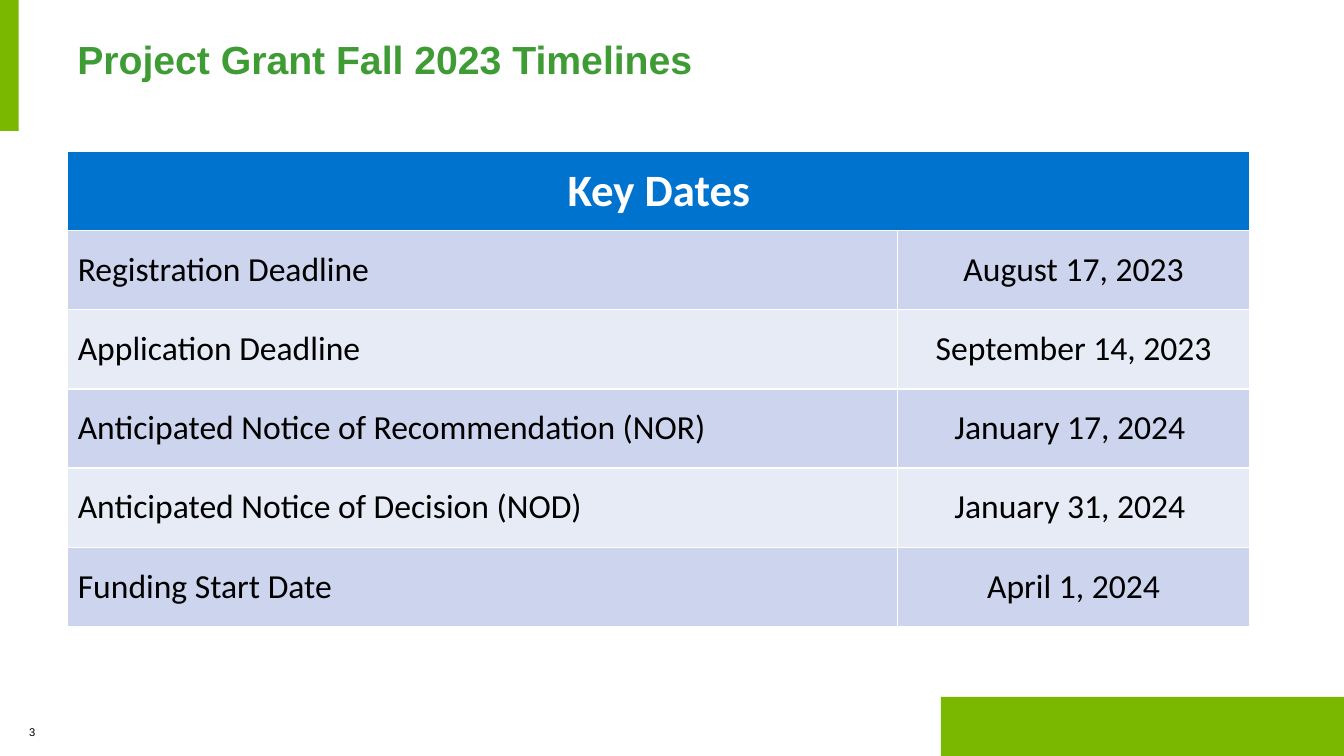
"""Build the Project Grant Fall 2023 timelines slide."""
from dataclasses import dataclass
from typing import Any

from pptx import Presentation
from pptx.dml.color import RGBColor
from pptx.enum.shapes import MSO_SHAPE
from pptx.enum.text import MSO_ANCHOR, MSO_AUTO_SIZE, PP_ALIGN
from pptx.util import Pt

RECTANGLE = MSO_SHAPE.RECTANGLE
MIDDLE = MSO_ANCHOR.MIDDLE
GROW = MSO_AUTO_SIZE.SHAPE_TO_FIT_TEXT
LEFT, CENTER = PP_ALIGN.LEFT, PP_ALIGN.CENTER

BLACK = RGBColor(0x00, 0x00, 0x00)
WHITE = RGBColor(0xFF, 0xFF, 0xFF)
BAR_GREEN = RGBColor(0x7A, 0xB8, 0x00)
TITLE_GREEN = RGBColor(0x3F, 0x9C, 0x35)
HEADER_BLUE = RGBColor(0x00, 0x73, 0xCF)
BANDS = (RGBColor(0xCC, 0xD5, 0xED), RGBColor(0xE7, 0xEB, 0xF6))

TITLE_FONT = {"name": "Arial", "size": Pt(28), "bold": True}
NUMBER_FONT = {"name": "Arial", "size": Pt(8), "bold": False}
HEADER_FONT = {"name": "Calibri", "size": Pt(32), "bold": True}
BODY_FONT = {"name": "Calibri", "size": Pt(24), "bold": False}

COLUMN_WIDTHS = (Pt(592.5), Pt(252))
ROW_HEIGHT = Pt(56.5)


@dataclass(frozen=True)
class Bar:
    left: float
    top: float
    width: float
    height: float


@dataclass(frozen=True)
class KeyDate:
    milestone: str
    date: str


BARS = (Bar(678.25, 0, 0, 0), ) and (
    Bar(672, 497.7, 288, 42.3),
    Bar(0, 0, 13.3, 93.6),
)

KEY_DATES = (
    KeyDate("Registration Deadline", "August 17, 2023"),
    KeyDate("Application Deadline", "September 14, 2023"),
    KeyDate("Anticipated Notice of Recommendation (NOR)", "January 17, 2024 "),
    KeyDate("Anticipated Notice of Decision (NOD)", "January 31, 2024 "),
    KeyDate("Funding Start Date", "April 1, 2024"),
)


def set_attributes(target: Any, values: dict[str, Any]) -> None:
    for name, value in values.items():
        setattr(target, name, value)


def write(frame: Any, text: str, font: dict[str, Any], color: RGBColor, alignment: Any) -> Any:
    para = frame.paragraphs[0]
    para.alignment = alignment
    span = para.add_run()
    span.text = text
    set_attributes(span.font, font)
    span.font.color.rgb = color
    return para


def add_bar(page: Any, bar: Bar) -> None:
    box = page.shapes.add_shape(
        RECTANGLE, Pt(bar.left), Pt(bar.top), Pt(bar.width), Pt(bar.height)
    )
    box.shadow.inherit = False
    box.fill.solid()
    box.fill.fore_color.rgb = BAR_GREEN
    box.line.fill.background()


def add_title(page: Any) -> None:
    title = page.shapes.title
    set_attributes(title, {"left": Pt(48), "top": Pt(21.6), "width": Pt(864), "height": Pt(41)})
    frame = title.text_frame
    set_attributes(frame, {"word_wrap": True, "auto_size": GROW, "vertical_anchor": MIDDLE})
    write(frame, "Project Grant Fall 2023 Timelines", TITLE_FONT, TITLE_GREEN, LEFT)


def add_page_number(page: Any) -> None:
    box = page.shapes.add_textbox(Pt(20.8), Pt(504), Pt(35.2), Pt(36))
    frame = box.text_frame
    set_attributes(frame, {
        "word_wrap": True, "vertical_anchor": MIDDLE, "margin_left": 0,
        "margin_top": Pt(3.6), "margin_right": 0, "margin_bottom": 0,
    })
    para = write(frame, "3", NUMBER_FONT, BLACK, LEFT)
    para.line_spacing = 0.9


def fill_cell(cell: Any, text: str, font: dict[str, Any], color: RGBColor,
              fill: RGBColor, alignment: Any) -> None:
    cell.fill.solid()
    cell.fill.fore_color.rgb = fill
    cell.vertical_anchor = MIDDLE
    write(cell.text_frame, text, font, color, alignment)


def add_key_dates(page: Any) -> None:
    row_count = len(KEY_DATES) + 1
    table = page.shapes.add_table(
        row_count, len(COLUMN_WIDTHS), Pt(48.4), Pt(108.3),
        sum(COLUMN_WIDTHS), ROW_HEIGHT * row_count,
    ).table
    for column, width in zip(table.columns, COLUMN_WIDTHS):
        column.width = width
    for row in table.rows:
        row.height = ROW_HEIGHT
    header = table.cell(0, 0)
    header.merge(table.cell(0, 1))
    fill_cell(header, "Key Dates", HEADER_FONT, WHITE, HEADER_BLUE, CENTER)
    for index, entry in enumerate(KEY_DATES):
        band = BANDS[index % len(BANDS)]
        fill_cell(table.cell(index + 1, 0), entry.milestone, BODY_FONT, BLACK, band, LEFT)
        fill_cell(table.cell(index + 1, 1), entry.date, BODY_FONT, BLACK, band, CENTER)


def main() -> None:
    deck = Presentation()
    set_attributes(deck, {"slide_width": Pt(960), "slide_height": Pt(540)})
    page = deck.slides.add_slide(deck.slide_layouts[5])
    add_page_number(page)
    for bar in BARS:
        add_bar(page, bar)
    add_title(page)
    add_key_dates(page)
    deck.save("out.pptx")


if __name__ == "__main__":
    main()
